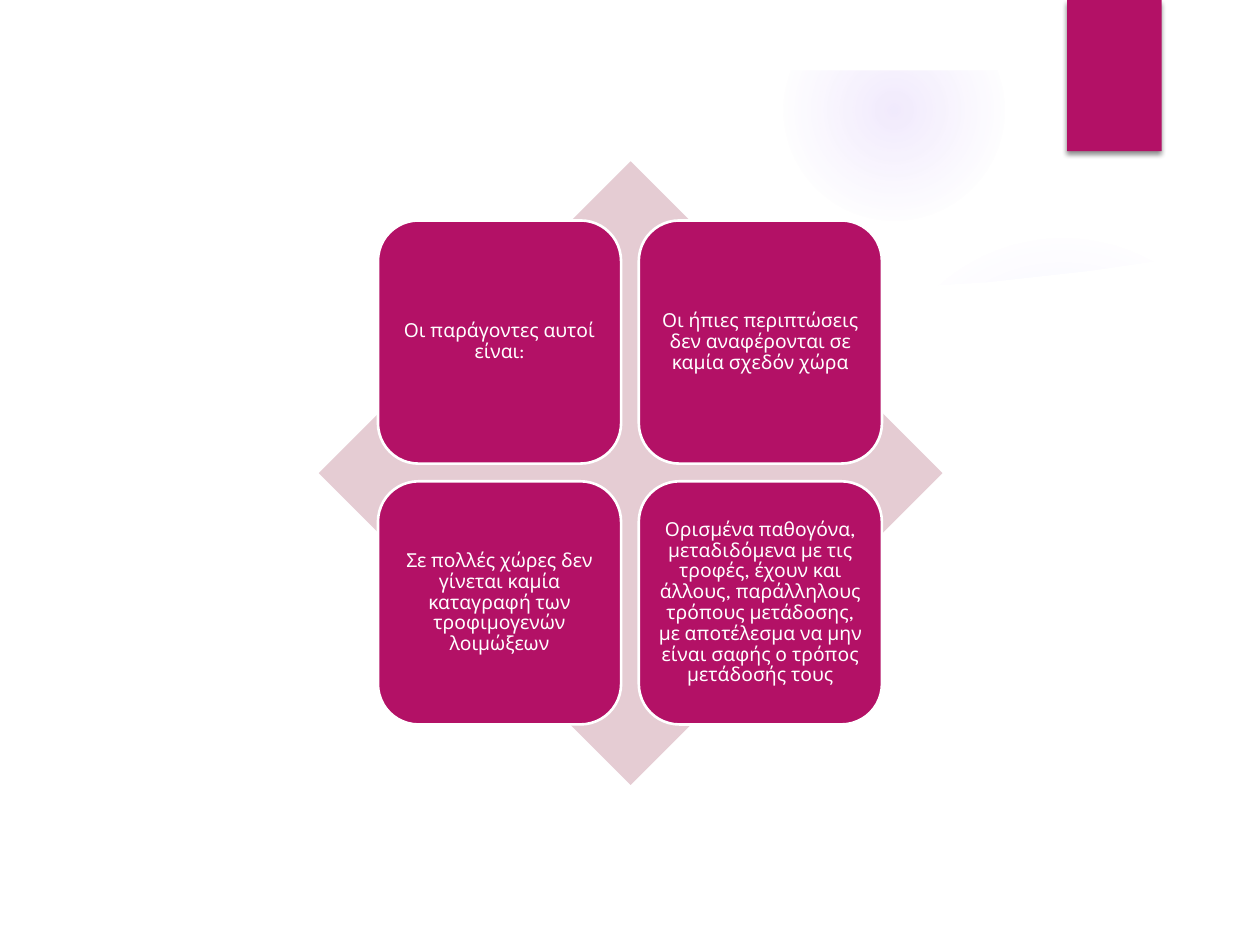
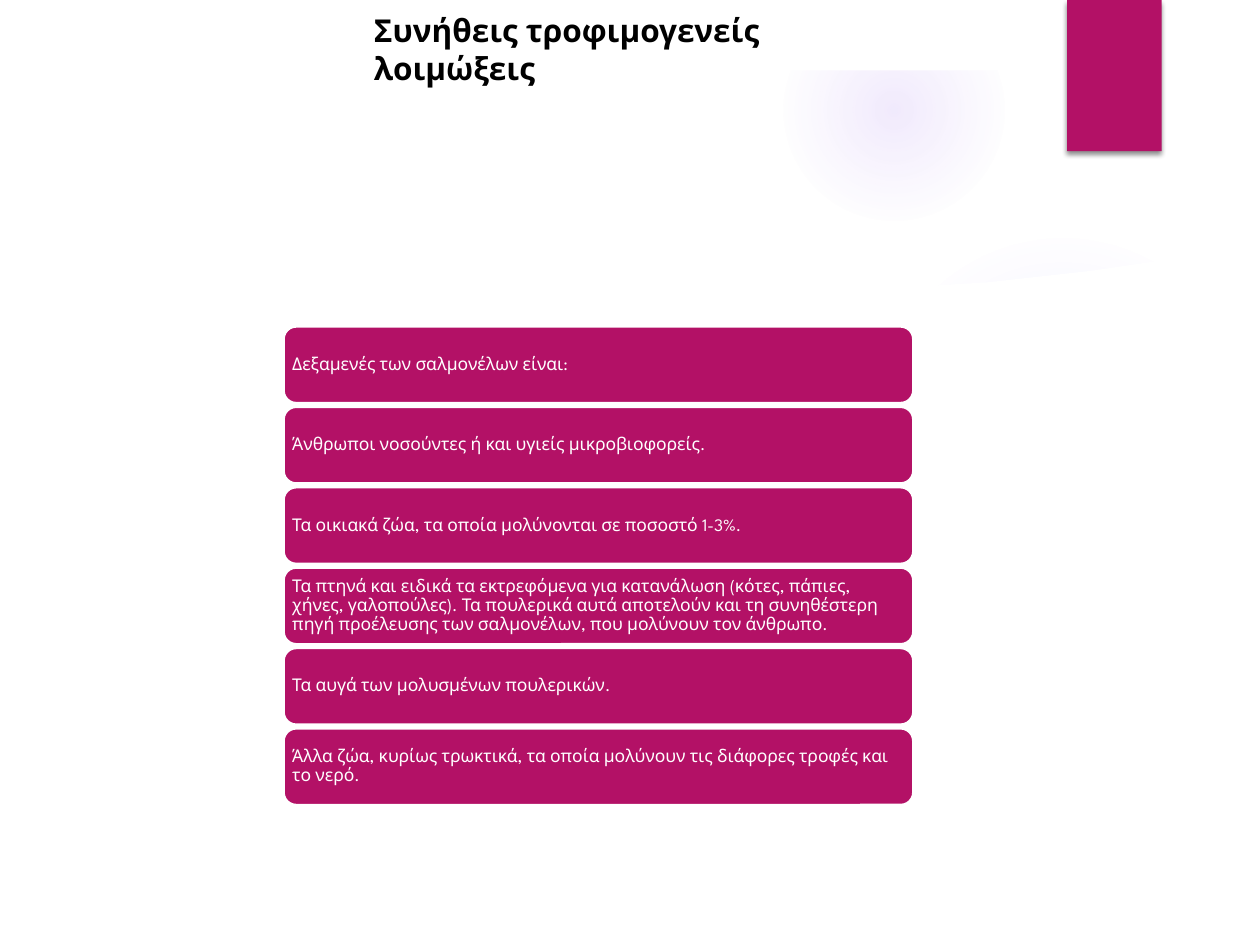
"""Build two slides on foodborne infections: a four-card matrix and a list of salmonella reservoirs."""
import lxml.etree
import pptx
import pptx.dml.color
import pptx.enum.shapes
import pptx.enum.text
import pptx.oxml
import pptx.oxml.ns
import pptx.util

Inches = pptx.util.Inches
Shapes = pptx.enum.shapes.MSO_SHAPE
Align = pptx.enum.text.PP_ALIGN

MAGENTA, PINK, VIOLET, WHITE, BLACK = "B31166", "E5CCD3", "9B6BF2", "FFFFFF", "000000"
BODY_FONT, TITLE_FONT = "League Spartan", "Open Sans"

FACTOR_CARDS = [
    "Οι παράγοντες αυτοί είναι:",
    "Οι ήπιες περιπτώσεις δεν αναφέρονται σε καμία σχεδόν χώρα",
    "Σε πολλές χώρες δεν γίνεται καμία καταγραφή των τροφιμογενών λοιμώξεων",
    "Ορισμένα παθογόνα, μεταδιδόμενα με τις τροφές, έχουν και άλλους, παράλληλους "
    "τρόπους μετάδοσης, με αποτέλεσμα να μην είναι σαφής ο τρόπος μετάδοσής τους",
]
RESERVOIR_TITLE = "Συνήθεις τροφιμογενείς λοιμώξεις"
RESERVOIRS = [
    "Δεξαμενές των σαλμονέλων είναι:",
    "Άνθρωποι νοσούντες ή και υγιείς μικροβιοφορείς.",
    "Τα οικιακά ζώα, τα οποία μολύνονται σε ποσοστό 1-3%.",
    "Τα πτηνά και ειδικά τα εκτρεφόμενα για κατανάλωση (κότες, πάπιες, χήνες, γαλοπούλες). "
    "Τα πουλερικά αυτά αποτελούν και τη συνηθέστερη πηγή προέλευσης των σαλμονέλων, "
    "που μολύνουν τον άνθρωπο.",
    "Τα αυγά των μολυσμένων πουλερικών.",
    "Άλλα ζώα, κυρίως τρωκτικά, τα οποία μολύνουν τις διάφορες τροφές και το νερό.",
]

# Each glow: left, top, diameter, then (position %, opacity %) stops.
GLOWS = [
    (0, 3.17, 2.58, [(0, 8), (36, 8), (72, 0)]),
    (6.89, 1.83, 3.08, [(0, 7), (36, 6), (69, 0)]),
    (6.22, 0, 1.75, [(0, 14), (36, 7), (73, 0)]),
    (6.89, 6.42, 1.08, [(0, 14), (36, 7), (66, 0)]),
    (0, 2.92, 4.58, [(0, 11), (36, 10), (75, 0)]),
]
RIBBON = [
    (6.99, 2.34), (7.49, 2.32), (8.2, 2.26), (8.95, 2.17), (9.56, 2.08), (9.51, 1.74),
    (9.01, 1.9), (8.5, 2.03), (8.01, 2.13), (7.54, 2.21), (7.1, 2.28), (6.96, 2.29),
]
WAVE_PANEL = [
    (0.53, 2.03), (0.53, 6.99), (9.47, 6.99), (9.47, 2.03), (8.66, 2.15), (7.85, 2.24),
    (7.04, 2.29), (6.25, 2.33), (5.48, 2.34), (4.39, 2.34), (3.71, 2.31), (3.07, 2.28),
    (2.49, 2.24), (1.73, 2.17), (0.99, 2.09),
]
FRAME_OUTER = [(0, 0), (0, 7.5), (10, 7.5), (10, 0)]
FRAME_INNER = [(9.45, 6.95), (0.56, 6.95), (0.56, 0.56), (9.45, 0.56)]


def color(hex_value):
    return pptx.dml.color.RGBColor.from_string(hex_value)


def drawing_xml(markup):
    namespace = pptx.oxml.ns.nsdecls("a")
    return pptx.oxml.parse_xml(markup.replace(">", f" {namespace}>", 1))


def paint(shape, fill, line=None):
    shape.shadow.inherit = False
    shape.fill.solid()
    shape.fill.fore_color.rgb = color(fill)
    if line:
        shape.line.color.rgb = color(line)
        shape.line.width = pptx.util.Pt(1.5)
    else:
        shape.line.fill.background()


def add_preset(slide, preset, box, fill, line=None):
    shape = slide.shapes.add_shape(preset, *map(Inches, box))
    paint(shape, fill, line)
    return shape


def add_outline(slide, *contours):
    builder = None
    for contour in contours:
        points = [(Inches(x), Inches(y)) for x, y in contour]
        if builder is None:
            builder = slide.shapes.build_freeform(*points[0])
        else:
            builder.move_to(*points[0])
        builder.add_line_segments(points[1:], close=True)
    shape = builder.convert_to_shape()
    paint(shape, WHITE)
    return shape


def write(shape, text, font_name, size, font_color, inset=None, align=Align.LEFT, bold=False):
    frame = shape.text_frame
    frame.word_wrap = True
    if inset is not None:
        frame.margin_left = frame.margin_right = Inches(inset)
        frame.margin_top = frame.margin_bottom = Inches(inset)
    frame.text = text
    paragraph = frame.paragraphs[0]
    paragraph.alignment = align
    font = paragraph.runs[0].font
    font.name, font.size, font.bold = font_name, pptx.util.Pt(size), bold
    font.color.rgb = color(font_color)
    return paragraph


def add_card(slide, box, text, size, inset, align):
    card = add_preset(slide, Shapes.ROUNDED_RECTANGLE, box, MAGENTA, WHITE)
    card.text_frame.vertical_anchor = pptx.enum.text.MSO_ANCHOR.MIDDLE
    write(card, text, BODY_FONT, size, WHITE, inset, align).line_spacing = 0.9


def add_glow(slide, left, top, diameter, stops):
    glow = add_preset(slide, Shapes.OVAL, (left, top, diameter, diameter), VIOLET)
    stop_markup = "".join(
        f'<a:gs pos="{position * 1000}"><a:srgbClr val="{VIOLET}">'
        f'<a:alpha val="{opacity * 1000}"/></a:srgbClr></a:gs>'
        for position, opacity in stops
    )
    gradient = drawing_xml(
        f'<a:gradFill rotWithShape="1"><a:gsLst>{stop_markup}</a:gsLst><a:path path="circle">'
        '<a:fillToRect l="50000" t="50000" r="50000" b="50000"/></a:path></a:gradFill>'
    )
    properties = glow.element.spPr
    properties.replace(properties.find(pptx.oxml.ns.qn("a:solidFill")), gradient)


def add_backdrop(slide):
    slide.background.fill.solid()
    slide.background.fill.fore_color.rgb = color(WHITE)
    for glow in GLOWS:
        add_glow(slide, *glow)
    ribbon = add_outline(slide, RIBBON)
    ribbon_color = ribbon.element.spPr.find(".//" + pptx.oxml.ns.qn("a:srgbClr"))
    lxml.etree.SubElement(ribbon_color, pptx.oxml.ns.qn("a:alpha"), val="20000")
    add_outline(slide, WAVE_PANEL)
    add_outline(slide, FRAME_OUTER, FRAME_INNER)
    tab = add_preset(slide, Shapes.RECTANGLE, (8.47, 0, 0.75, 1.2), MAGENTA)
    tab.element.spPr.find(pptx.oxml.ns.qn("a:effectLst")).append(drawing_xml(
        f'<a:outerShdw blurRad="{pptx.util.Pt(3)}" dist="{pptx.util.Pt(2)}" dir="5400000" '
        f'rotWithShape="0"><a:srgbClr val="{BLACK}"><a:alpha val="45000"/></a:srgbClr></a:outerShdw>'
    ))


def add_factor_matrix(slide):
    add_preset(slide, Shapes.DIAMOND, (2.53, 1.28, 4.95, 4.95), PINK)
    side, pitch = 1.93, 2.07
    for index, text in enumerate(FACTOR_CARDS):
        row, column = divmod(index, 2)
        box = (3 + column * pitch, 1.75 + row * pitch, side, side)
        add_card(slide, box, text, 11, 0.05, Align.CENTER)


def add_reservoir_list(slide):
    title = slide.shapes.add_textbox(*map(Inches, (2.87, 0.04, 4.27, 0.4)))
    write(title, RESERVOIR_TITLE, TITLE_FONT, 18, BLACK, bold=True)
    first_top, last_top = 2.59, 5.78
    pitch = (last_top - first_top) / (len(RESERVOIRS) - 1)
    for index, text in enumerate(RESERVOIRS):
        add_card(slide, (2.25, first_top + index * pitch, 5, 0.61), text, 10, 0.04, Align.LEFT)


def main():
    presentation = pptx.Presentation()
    presentation.slide_width, presentation.slide_height = Inches(10), Inches(7.5)
    for add_content in (add_factor_matrix, add_reservoir_list):
        slide = presentation.slides.add_slide(presentation.slide_layouts[6])
        add_backdrop(slide)
        add_content(slide)
    presentation.save("out.pptx")


if __name__ == "__main__":
    main()
